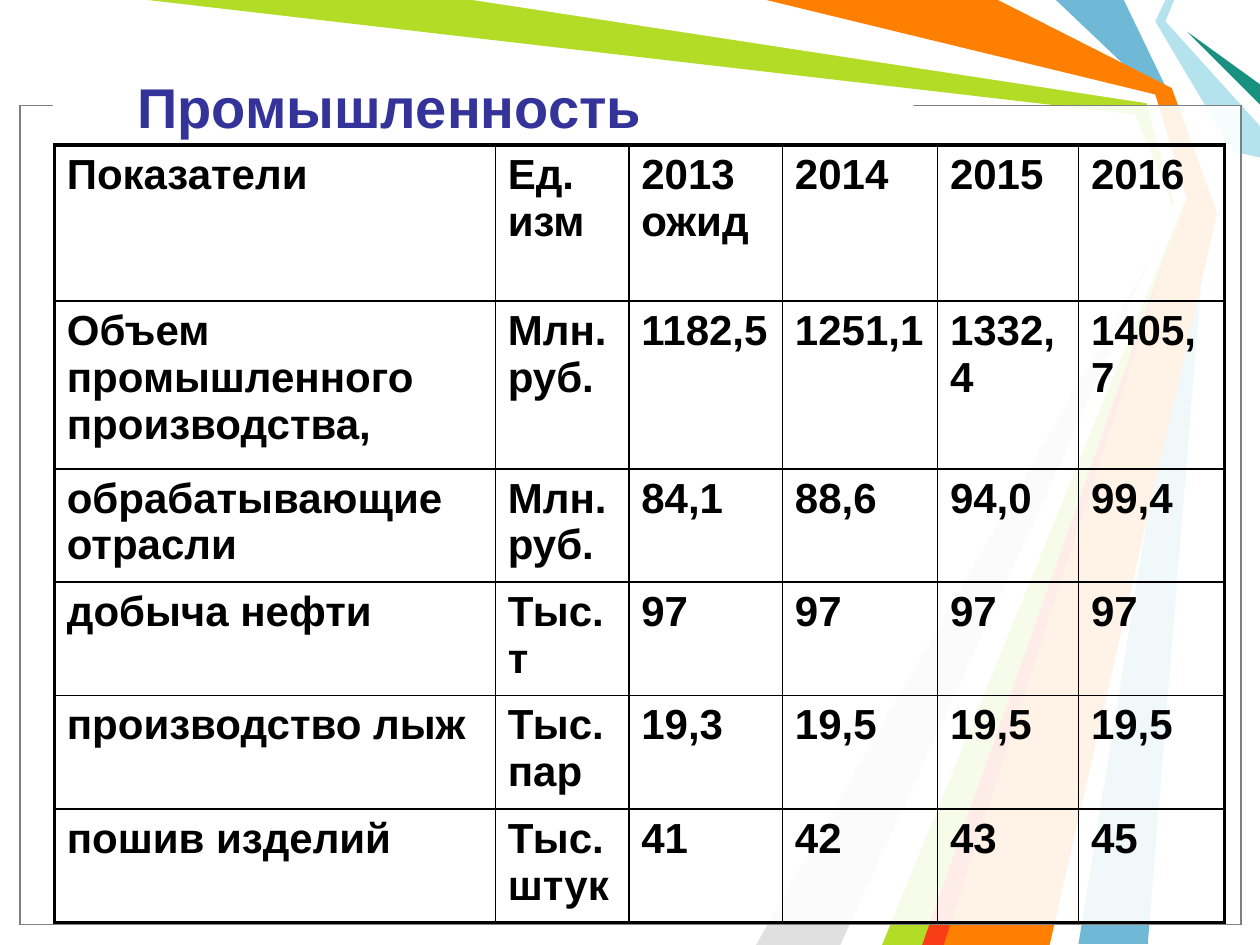
from lxml.etree import SubElement
from pptx import Presentation
from pptx.dml.color import RGBColor
from pptx.enum.shapes import MSO_SHAPE
from pptx.enum.text import MSO_ANCHOR, PP_ALIGN
from pptx.oxml.ns import qn
from pptx.util import Pt

COLORS = {
    "blue": "6FB9D7", "lime": "B3DC27", "gray": "E0E0E0", "white": "FFFFFF",
    "ice": "B4E3EE", "teal": "189180", "orange": "FF7F00", "red": "F93D17",
    "black": "000000", "frame": "808080", "title": "333399",
}
RAYS = [
    ("blue", [(642.2, 0), (668.9, 55.4), (689.8, 120.2), (655.9, 539.3), (616.3, 539.3),
              (684, 120.2), (660.2, 54), (603.4, 0)]),
    ("lime", [(84.2, 0), (275.8, 0), (658.1, 56.2), (678.2, 121.7), (534.2, 540),
              (498.2, 540), (673.2, 124.6), (648.7, 65.5)]),
    ("gray", [(480.2, 540), (667.4, 130.3), (432, 540)]),
    ("white", [(270, 0), (655.2, 59), (671, 116.6), (486, 540), (504, 540),
               (677.5, 113.8), (660.2, 54), (432, 0)]),
    ("ice", [(666, 0), (660.2, 12.2), (704.2, 86.4), (720, 90), (720, 72),
             (666, 12.2), (671, 0)]),
    ("teal", [(720, 59.8), (678.2, 18), (720, 48.2)]),
    ("orange", [(437.8, 0), (570.2, 0), (669.6, 50.4), (695.5, 121.7), (599.8, 540),
                (527.8, 540), (678.2, 113.8), (660.2, 54)]),
    ("red", [(527, 540), (671, 131.8), (539.3, 540)]),
]
PANELS = [
    (11.5, 60.5, 697.7, 468, "black", 69),
    (11.5, 60.5, 697.7, 468, "frame", 69),
    (30.2, 53.3, 491.8, 12.2, None, 100),
]
COL_WIDTHS = [252, 76.3, 87.8, 88.6, 80.6, 83.5]
ROW_HEIGHTS = [89.3, 95.8, 64.8, 51.8, 51.8, 52.6]
ROWS = [
    ["Показатели", "Ед. изм", "2013 ожид", "2014", "2015", "2016"],
    ["Объем промышленного производства,", "Млн. руб.", "1182,5", "1251,1", "1332,4", "1405,7"],
    ["обрабатывающие отрасли", "Млн. руб.", "84,1", "88,6", "94,0", "99,4"],
    ["добыча нефти", "Тыс.т", "97", "97", "97", "97"],
    ["производство лыж", "Тыс.пар", "19,3", "19,5", "19,5", "19,5"],
    ["пошив изделий", "Тыс. штук", "41", "42", "43", "45"],
]


def paint(shape, color):
    shape.shadow.inherit = False
    shape.fill.solid()
    shape.fill.fore_color.rgb = RGBColor.from_string(COLORS[color])
    shape.line.fill.background()


def style(p, size, color):
    p.alignment = PP_ALIGN.LEFT
    p.font.name = "Arial"
    p.font.size = Pt(size)
    p.font.bold = True
    p.font.color.rgb = RGBColor.from_string(COLORS[color])


prs = Presentation()
prs.slide_width, prs.slide_height = Pt(720), Pt(540)
s = prs.slides.add_slide(prs.slide_layouts[6])

for color, points in RAYS:
    corners = [(Pt(x), Pt(y)) for x, y in points]
    builder = s.shapes.build_freeform(*corners[0])
    builder.add_line_segments(corners[1:], close=True)
    paint(builder.convert_to_shape(), color)

for x, y, w, h, line, opacity in PANELS:
    sp = s.shapes.add_shape(MSO_SHAPE.RECTANGLE, Pt(x), Pt(y), Pt(w), Pt(h))
    paint(sp, "white")
    if line:
        sp.line.color.rgb = RGBColor.from_string(COLORS[line])
        sp.line.width = Pt(0.75)
        srgb = sp.fill._xPr.find(".//" + qn("a:srgbClr"))
        SubElement(srgb, qn("a:alpha"), val=str(opacity * 1000))

tf = s.shapes.add_textbox(Pt(71.3), Pt(15.8), Pt(496), Pt(90)).text_frame
tf.word_wrap = True
tf.vertical_anchor = MSO_ANCHOR.MIDDLE
tf.text = "Промышленность"
style(tf.paragraphs[0], 32, "title")

table = s.shapes.add_table(len(ROWS), len(COL_WIDTHS), Pt(31), Pt(82.8),
                           Pt(sum(COL_WIDTHS)), Pt(sum(ROW_HEIGHTS))).table
table.first_row = table.horz_banding = False
for column, width in zip(table.columns, COL_WIDTHS):
    column.width = Pt(width)
for row, height in zip(table.rows, ROW_HEIGHTS):
    row.height = Pt(height)

for i, texts in enumerate(ROWS):
    for j, text in enumerate(texts):
        cell = table.cell(i, j)
        cell.text = text
        style(cell.text_frame.paragraphs[0], 24, "black")
        tcPr = cell._tc.get_or_add_tcPr()
        outer = {"lnL": j == 0, "lnR": j == len(texts) - 1,
                 "lnT": i == 0, "lnB": i == len(ROWS) - 1}
        for side, is_outer in outer.items():
            ln = SubElement(tcPr, qn("a:" + side), w=str(Pt(2.25 if is_outer else 1)))
            fill = SubElement(ln, qn("a:solidFill"))
            SubElement(fill, qn("a:srgbClr"), val=COLORS["black"])
        cell.fill.background()

prs.save("out.pptx")
